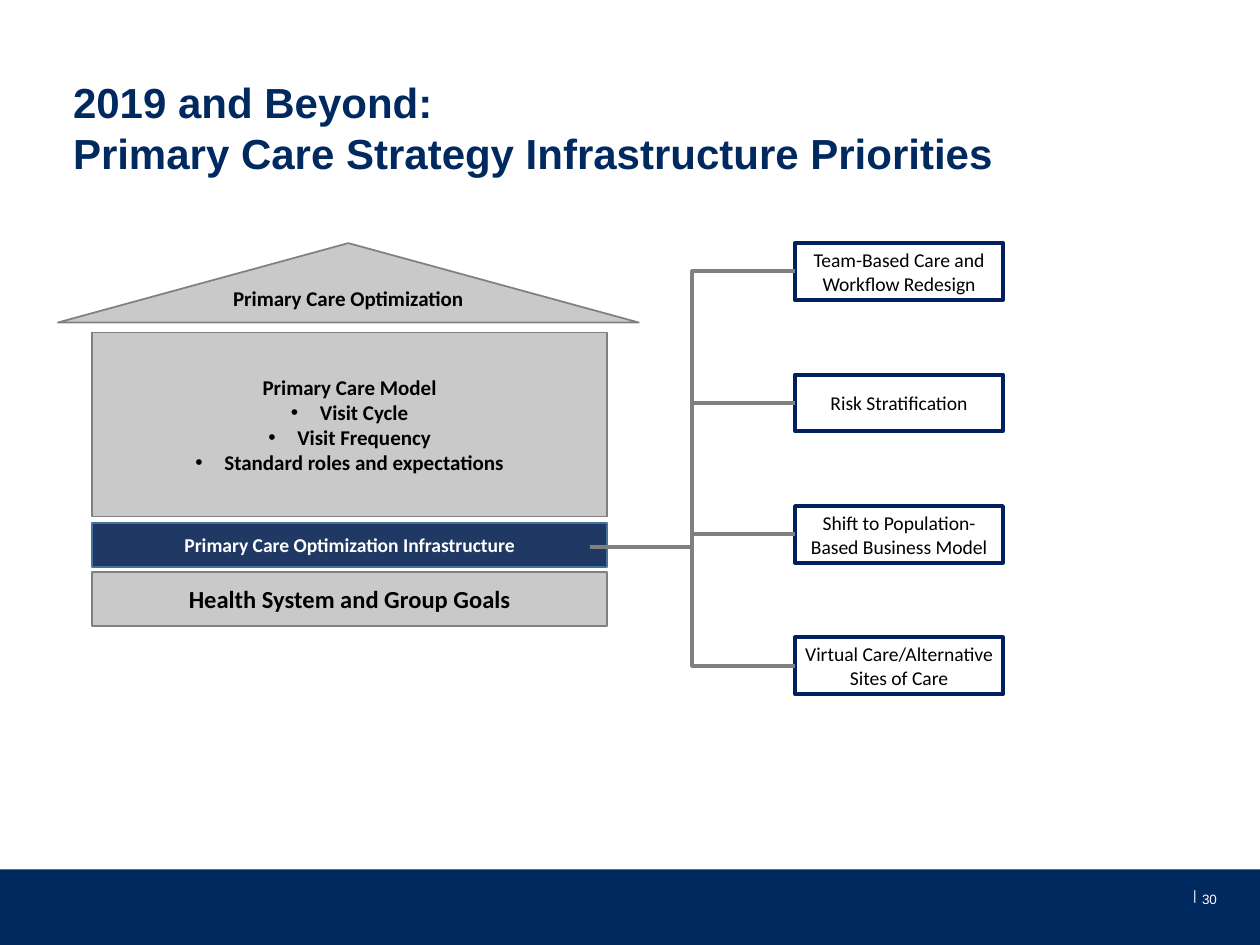
"""Build the slide on primary care strategy infrastructure priorities."""
from lxml import etree
from pptx import Presentation
from pptx.dml.color import RGBColor
from pptx.enum.shapes import MSO_CONNECTOR, MSO_SHAPE
from pptx.enum.text import MSO_ANCHOR, PP_ALIGN
from pptx.oxml.ns import qn
from pptx.util import Inches, Pt

RECTANGLE, TRIANGLE = MSO_SHAPE.RECTANGLE, MSO_SHAPE.ISOSCELES_TRIANGLE
ELBOW = MSO_CONNECTOR.ELBOW
TOP, MIDDLE, BOTTOM = MSO_ANCHOR.TOP, MSO_ANCHOR.MIDDLE, MSO_ANCHOR.BOTTOM
CENTER, LEFT = PP_ALIGN.CENTER, PP_ALIGN.LEFT

BLUE = RGBColor(0x00, 0x29, 0x60)
NAVY = RGBColor(0x00, 0x20, 0x60)
DEEP_BLUE = RGBColor(0x20, 0x38, 0x64)
STEEL = RGBColor(0x43, 0x73, 0x9E)
SILVER = RGBColor(0xC9, 0xC9, 0xC9)
GRAY = RGBColor(0x80, 0x80, 0x80)
WHITE = RGBColor(0xFF, 0xFF, 0xFF)
BLACK = RGBColor(0x00, 0x00, 0x00)

COLUMNS, ROWS = 100, 75
UNIT = Inches(0.1)
BULLET_INDENT = Inches(0.23)

PRIORITIES = [
    "Team-Based Care and Workflow Redesign",
    "Risk Stratification",
    "Shift to Population-Based Business Model",
    "Virtual Care/Alternative Sites of Care",
]
MODEL_PARTS = ["Visit Cycle", "Visit Frequency", "Standard roles and expectations"]


def grid(*cells):
    """Turn grid columns and rows into slide lengths."""
    return [round(cell * UNIT) for cell in cells]


def style(paragraph, size, color, font="Calibri", bold=False, align=CENTER):
    """Set the alignment and font of a paragraph."""
    paragraph.alignment = align
    paragraph.font.name = font
    paragraph.font.size = Pt(size)
    paragraph.font.bold = bold
    paragraph.font.color.rgb = color


def set_margins(frame, side, top, bottom):
    """Set the inner margins of a text frame in grid units."""
    frame.margin_left = frame.margin_right = round(side * UNIT)
    frame.margin_top, frame.margin_bottom = grid(top, bottom)


def add_label(slide, area, text, size, color, bold=False, anchor=TOP, wrap=False):
    """Add plain Arial text without margins."""
    frame = slide.shapes.add_textbox(*grid(*area)).text_frame
    frame.word_wrap = wrap
    frame.vertical_anchor = anchor
    set_margins(frame, 0, 0, 0)
    frame.text = text
    style(frame.paragraphs[0], size, color, "Arial", bold, LEFT)


def add_block(slide, area, fill, outline=None, width=1, kind=RECTANGLE):
    """Add a filled shape, outlined when a line colour is given."""
    block = slide.shapes.add_shape(kind, *grid(*area))
    block.shadow.inherit = False
    block.fill.solid()
    block.fill.fore_color.rgb = fill
    if outline is None:
        block.line.fill.background()
    else:
        block.line.color.rgb = outline
        block.line.width = Pt(width)
    return block


def write(block, text, size, color=BLACK, bold=True):
    """Write centred text in a block and return its frame."""
    frame = block.text_frame
    frame.word_wrap = True
    frame.vertical_anchor = MIDDLE
    frame.text = text
    style(frame.paragraphs[0], size, color, bold=bold)
    return frame


def add_bullet(frame, text, size):
    """Append a centred bullet paragraph."""
    paragraph = frame.add_paragraph()
    paragraph.text = text
    properties = paragraph._p.get_or_add_pPr()
    properties.set("marL", str(BULLET_INDENT))
    properties.set("indent", str(-BULLET_INDENT))
    etree.SubElement(properties, qn("a:buFont")).set("typeface", "Arial")
    etree.SubElement(properties, qn("a:buChar")).set("char", "•")
    style(paragraph, size, BLACK, bold=True)


def add_branch(slide, start, end):
    """Link two grid points with an elbow connector."""
    branch = slide.shapes.add_connector(ELBOW, *grid(*start, *end))
    branch.line.color.rgb = GRAY
    branch.line.width = Pt(2.25)
    etree.SubElement(branch._element.spPr, qn("a:effectLst"))


def add_house(slide):
    """Stack the roof, model, infrastructure and goals."""
    left, width = 7.3, 40.9
    base = add_block(slide, (left, 41.5, width, 3.5), DEEP_BLUE, STEEL)
    write(base, "Primary Care Optimization Infrastructure", 11.2, WHITE)

    roof = add_block(slide, (4.6, 19.3, 46.1, 6.3), SILVER, GRAY, kind=TRIANGLE)
    set_margins(write(roof, "Primary Care Optimization", 12), 1, 0, 0.8)

    model = add_block(slide, (left, 26.4, width, 14.6), SILVER, GRAY)
    model_frame = write(model, "Primary Care Model", 12)
    for part in MODEL_PARTS:
        add_bullet(model_frame, part, 12)

    goals = add_block(slide, (left, 45.4, width, 4.3), SILVER, GRAY)
    write(goals, "Health System and Group Goals", 14)


def add_priorities(slide):
    """List the priorities and branch to each from the infrastructure."""
    left, top, width, height, pitch = 63.1, 19.3, 16.5, 4.5, 10.43
    tops = [top + pitch * row for row in range(len(PRIORITIES))]
    for box_top, priority in zip(tops, PRIORITIES):
        box = add_block(slide, (left, box_top, width, height), WHITE, NAVY, 2.25)
        set_margins(write(box, priority, 11.2, bold=False), 0.4, 0.6, 0.6)
    for box_top in tops:
        add_branch(slide, (46.8, 43.4), (left, box_top + height / 2))


def main():
    """Compose and save the slide."""
    deck = Presentation()
    deck.slide_width, deck.slide_height = grid(COLUMNS, ROWS)
    slide = deck.slides.add_slide(deck.slide_layouts[6])

    add_block(slide, (0, 69, COLUMNS, 6), BLUE)
    add_label(slide, (94.7, 70.4, 0.4, 1.7), "|", 7.7, WHITE)
    title = "2019 and Beyond:\vPrimary Care Strategy Infrastructure Priorities"
    add_label(slide, (5.8, 6, 92, 8.1), title, 24, BLUE, True, BOTTOM, True)
    add_label(slide, (95.4, 70.7, 2.3, 1.7), "30", 7.7, WHITE)
    add_house(slide)
    add_priorities(slide)

    deck.save("out.pptx")


if __name__ == "__main__":
    main()
